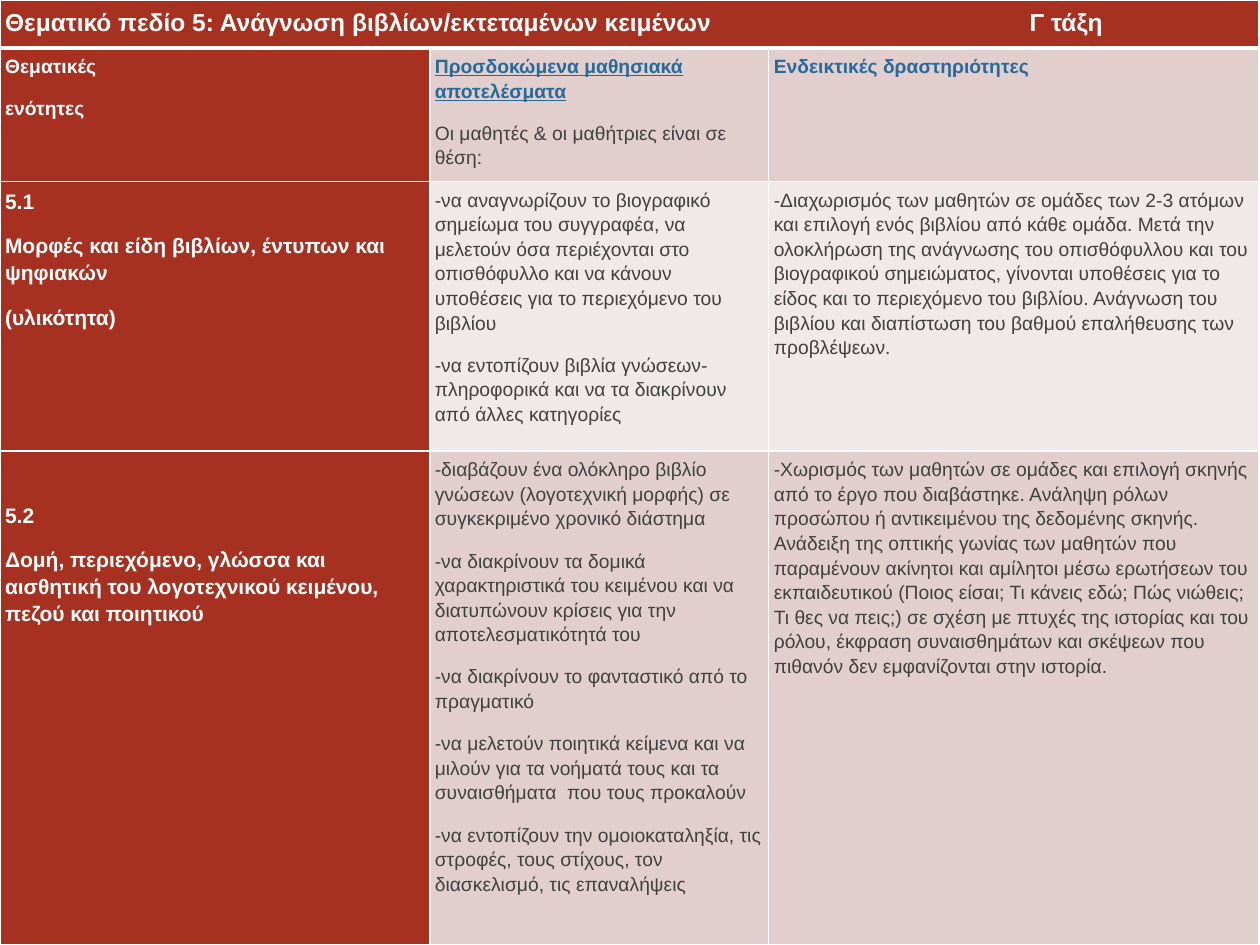
from pptx import Presentation
from pptx.dml.color import RGBColor
from pptx.oxml import parse_xml
from pptx.oxml.ns import nsdecls
from pptx.util import Pt

WHITE = RGBColor(0xFF, 0xFF, 0xFF)
BRICK = RGBColor(0xA6, 0x31, 0x21)
ROSE = RGBColor(0xE1, 0xCE, 0xCD)
PALE = RGBColor(0xF1, 0xE8, 0xE8)
BLUE = RGBColor(0x25, 0x6A, 0x98)
GREY = RGBColor(0x40, 0x40, 0x40)

# Text styles: size, colour, bold, underline
TITLE = (14, WHITE, True, False)
LABEL = (11, WHITE, True, False)
UNIT = (12, WHITE, True, False)
HEADING = (11, BLUE, True, False)
UNDERLINED = (11, BLUE, True, True)
BODY = (11, GREY, False, False)

# Content: each cell is a list of (text, style) paragraphs
title_row = [
    [("Θεματικό πεδίο 5: Ανάγνωση βιβλίων/εκτεταμένων κειμένων\tΓ τάξη", TITLE)],
]
heading_row = [
    [("Θεματικές", LABEL), ("ενότητες", LABEL)],
    [("Προσδοκώμενα μαθησιακά αποτελέσματα", UNDERLINED),
     ("Οι μαθητές & οι μαθήτριες είναι σε θέση:", BODY)],
    [("Ενδεικτικές δραστηριότητες", HEADING)],
]
forms_row = [
    [("5.1", UNIT),
     ("Μορφές και είδη βιβλίων, έντυπων και ψηφιακών", UNIT),
     ("(υλικότητα)", UNIT)],
    [("-να αναγνωρίζουν το βιογραφικό σημείωμα του συγγραφέα, να μελετούν όσα "
      "περιέχονται στο οπισθόφυλλο και να κάνουν υποθέσεις για το περιεχόμενο του βιβλίου", BODY),
     ("-να εντοπίζουν βιβλία γνώσεων-πληροφορικά και να τα διακρίνουν από άλλες "
      "κατηγορίες", BODY)],
    [("-Διαχωρισμός των μαθητών σε ομάδες των 2-3 ατόμων και επιλογή ενός βιβλίου από "
      "κάθε ομάδα. Μετά την ολοκλήρωση της ανάγνωσης του οπισθόφυλλου και του "
      "βιογραφικού σημειώματος, γίνονται υποθέσεις για το είδος και το περιεχόμενο του "
      "βιβλίου. Ανάγνωση του βιβλίου και διαπίστωση του βαθμού επαλήθευσης των "
      "προβλέψεων.", BODY)],
]
structure_row = [
    [("5.2", UNIT),
     ("Δομή, περιεχόμενο, γλώσσα και αισθητική του λογοτεχνικού κειμένου, πεζού και "
      "ποιητικού", UNIT)],
    [("-διαβάζουν ένα ολόκληρο βιβλίο γνώσεων (λογοτεχνική μορφής) σε συγκεκριμένο "
      "χρονικό διάστημα", BODY),
     ("-να διακρίνουν τα δομικά χαρακτηριστικά του κειμένου και να διατυπώνουν κρίσεις "
      "για την αποτελεσματικότητά του", BODY),
     ("-να διακρίνουν το φανταστικό από το πραγματικό", BODY),
     ("-να μελετούν ποιητικά κείμενα και να μιλούν για τα νοήματά τους και τα "
      "συναισθήματα  που τους προκαλούν", BODY),
     ("-να εντοπίζουν την ομοιοκαταληξία, τις στροφές, τους στίχους, τον διασκελισμό, "
      "τις επαναλήψεις", BODY)],
    [("-Χωρισμός των μαθητών σε ομάδες και επιλογή σκηνής από το έργο που διαβάστηκε. "
      "Ανάληψη ρόλων προσώπου ή αντικειμένου της δεδομένης σκηνής. Ανάδειξη της οπτικής "
      "γωνίας των μαθητών που παραμένουν ακίνητοι και αμίλητοι μέσω ερωτήσεων του "
      "εκπαιδευτικού (Ποιος είσαι; Τι κάνεις εδώ; Πώς νιώθεις; Τι θες να πεις;) σε σχέση "
      "με πτυχές της ιστορίας και του ρόλου, έκφραση συναισθημάτων και σκέψεων που "
      "πιθανόν δεν εμφανίζονται στην ιστορία.", BODY)],
]

# Rows: height, fill beyond the first column, cells
ROWS = [
    (27.4, BRICK, title_row),
    (76.3, ROSE, heading_row),
    (154.1, PALE, forms_row),
    (282.2, ROSE, structure_row),
]
COLUMN_WIDTHS = [245.6, 193.7, 280.1]
INSET = 2.9
CLASS_TAB = 585.5      # where the class name starts in the title row
UNIT_5_2_DROP = 25.5   # one line lower than its neighbours


def add_borders(cell, bottom_width):
    widths = {"L": 1, "R": 1, "T": 1, "B": bottom_width}
    for side, width in widths.items():
        cell._tc.get_or_add_tcPr().append(parse_xml(
            f'<a:ln{side} {nsdecls("a")} w="{Pt(width)}"><a:solidFill>'
            f'<a:srgbClr val="{WHITE}"/></a:solidFill></a:ln{side}>'))


def write_cell(cell, paragraphs):
    cell.margin_left = cell.margin_right = Pt(INSET)
    cell.margin_top = cell.margin_bottom = Pt(INSET)
    for i, (words, (size, colour, bold, underline)) in enumerate(paragraphs):
        frame = cell.text_frame
        paragraph = frame.add_paragraph() if i else frame.paragraphs[0]
        if "\t" in words:
            paragraph._p.get_or_add_pPr().append(parse_xml(
                f'<a:tabLst {nsdecls("a")}><a:tab pos="{Pt(CLASS_TAB)}" algn="l"/></a:tabLst>'))
        paragraph.line_spacing = 1.15
        paragraph.space_after = Pt(10)
        run = paragraph.add_run()
        run.text = words
        run.font.name = "Arial"
        run.font.size = Pt(size)
        run.font.bold = bold
        run.font.underline = underline
        run.font.color.rgb = colour


prs = Presentation()
prs.slide_width, prs.slide_height = Pt(720), Pt(540)
slide = prs.slides.add_slide(prs.slide_layouts[6])

# Table grid
curriculum = slide.shapes.add_table(
    len(ROWS), len(COLUMN_WIDTHS), 0, 0,
    Pt(sum(COLUMN_WIDTHS)), Pt(sum(height for height, _, _ in ROWS))).table
for column, width in zip(curriculum.columns, COLUMN_WIDTHS):
    column.width = Pt(width)

# Fills, borders and text
for r, (height, fill, cells) in enumerate(ROWS):
    curriculum.rows[r].height = Pt(height)
    for c in range(len(COLUMN_WIDTHS)):
        cell = curriculum.cell(r, c)
        add_borders(cell, 3 if r == 0 else 1)
        cell.fill.solid()
        cell.fill.fore_color.rgb = fill if c else BRICK
        if c < len(cells):
            write_cell(cell, cells[c])

# Title across all columns, unit 5.2 set lower
curriculum.cell(0, 0).merge(curriculum.cell(0, len(COLUMN_WIDTHS) - 1))
curriculum.cell(3, 0).margin_top = Pt(INSET + UNIT_5_2_DROP)

prs.save("out.pptx")
